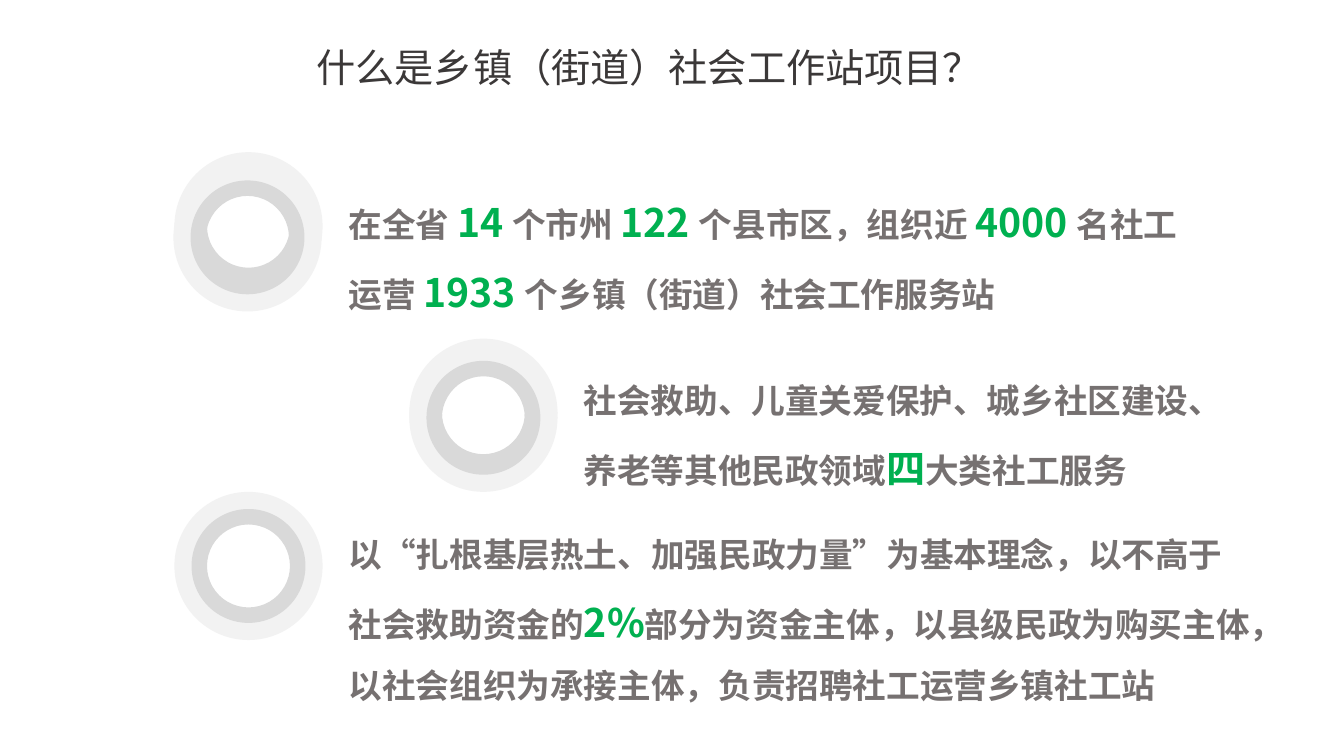
import pptx
import pptx.dml.color
import pptx.enum.shapes
import pptx.enum.text
import pptx.oxml.ns
import pptx.util
from lxml import etree

Inches = pptx.util.Inches
FONT = "Noto Sans CJK SC"
TITLE = {"size": 28, "color": "3B3838", "bold": False}
BODY = {"size": 24, "color": "767171", "bold": True}
KEY = {"size": 28, "color": "00B050", "bold": True}

# (left, top, width, height), paragraphs of (words, format)
TEXTS = [
    ((3.36, 1.68, 9.18, 1.51), [
        [("在全省 ", BODY), ("14 ", KEY), ("个市州 ", BODY), ("122 ", KEY),
         ("个县市区，组织近 ", BODY), ("4000 ", KEY), ("名社工", BODY)],
        [("运营 ", BODY), ("1933 ", KEY), ("个乡镇（街道）社会工作服务站", BODY)],
    ]),
    ((5.69, 3.52, 6.57, 1.41), [
        [("社会救助、儿童关爱保护、城乡社区建设、养老等其他民政领域", BODY),
         ("四", KEY), ("大类社工服务", BODY)],
    ]),
    ((3.36, 5.05, 9.18, 2.02), [
        [("以“扎根基层热土、加强民政力量”为基本理念，以不高于社会救助资金的", BODY),
         ("2%", KEY),
         ("部分为资金主体，以县级民政为购买主体，以社会组织为承接主体，"
          "负责招聘社工运营乡镇社工站", BODY)],
    ]),
    ((3.04, 0.15, 7.55, 0.81), [[("什么是乡镇（街道）社会工作站项目？", TITLE)]]),
]

# Left and top of each double ring, back to front
RINGS = [(1.73, 1.51), (4.06, 3.36), (1.73, 4.88), (1.72, 1.62), (4.06, 3.41)]
# Inset from the ring corner, diameter, colour
BANDS = [(0, 1.47, "F2F2F2"), (0.17, 1.13, "D9D9D9")]
BAND_THICKNESS = 0.136


def rgb(code):
    return pptx.dml.color.RGBColor.from_string(code)


def add_ring(slide, left, top):
    for inset, diameter, color in BANDS:
        band = slide.shapes.add_shape(
            pptx.enum.shapes.MSO_SHAPE.DONUT, Inches(left + inset),
            Inches(top + inset), Inches(diameter), Inches(diameter))
        band.adjustments[0] = BAND_THICKNESS
        band.shadow.inherit = False
        band.fill.solid()
        band.fill.fore_color.rgb = rgb(color)
        band.line.fill.background()


def add_words(paragraph, words, style):
    run = paragraph.add_run()
    run.text = words
    settings = {"name": FONT, "size": pptx.util.Pt(style["size"]), "bold": style["bold"]}
    for attribute, value in settings.items():
        setattr(run.font, attribute, value)
    run.font.color.rgb = rgb(style["color"])
    east_asian = etree.SubElement(run.font._element, pptx.oxml.ns.qn("a:ea"))
    east_asian.set("typeface", FONT)


def add_text(slide, place, paragraphs):
    frame = slide.shapes.add_textbox(*map(Inches, place)).text_frame
    frame.word_wrap = True
    frame.auto_size = pptx.enum.text.MSO_AUTO_SIZE.SHAPE_TO_FIT_TEXT
    for index, pieces in enumerate(paragraphs):
        paragraph = frame.add_paragraph() if index else frame.paragraphs[0]
        paragraph.line_spacing = 1.5
        for words, style in pieces:
            add_words(paragraph, words, style)


def main():
    deck = pptx.Presentation()
    deck.slide_width, deck.slide_height = Inches(13.33), Inches(7.5)
    slide = deck.slides.add_slide(deck.slide_layouts[6])
    for left, top in RINGS:
        add_ring(slide, left, top)
    for place, paragraphs in TEXTS:
        add_text(slide, place, paragraphs)
    deck.save("out.pptx")


if __name__ == "__main__":
    main()
